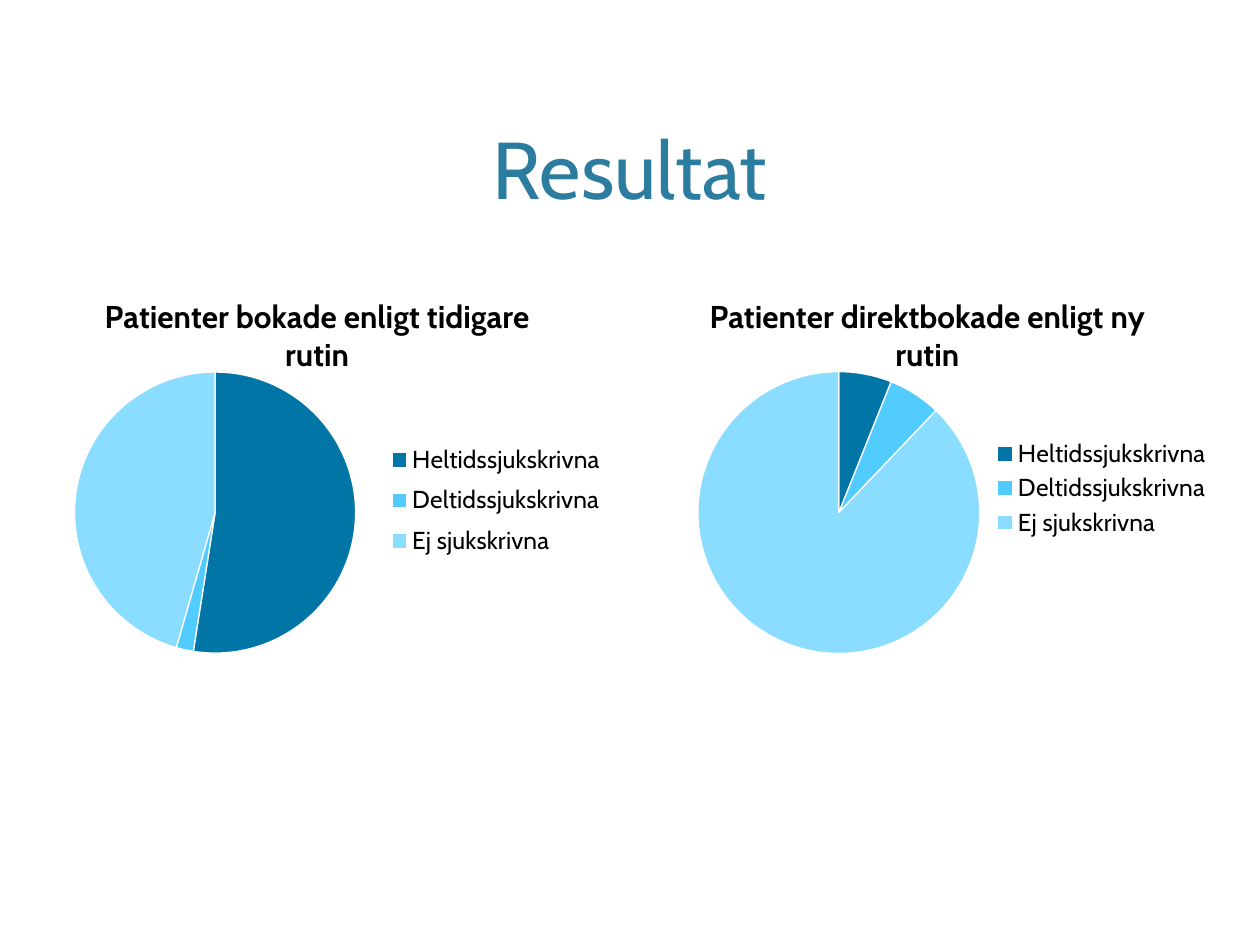
from lxml import etree
from pptx import Presentation
from pptx.chart.data import CategoryChartData
from pptx.dml.color import RGBColor
from pptx.enum.chart import XL_CHART_TYPE, XL_LEGEND_POSITION
from pptx.enum.text import MSO_ANCHOR, PP_ALIGN
from pptx.oxml.ns import qn
from pptx.util import Inches, Pt

FACE = "Cabin"
GROUPS = {
    "Heltidssjukskrivna": "0075A6",
    "Deltidssjukskrivna": "52CCFF",
    "Ej sjukskrivna": "8BDDFF",
}


def color(code):
    return RGBColor.from_string(code)


def style(font, size, ink="000000", bold=False):
    font.name, font.size, font.bold = FACE, Pt(size), bold
    font.color.rgb = color(ink)


def write(frame, text, size, **look):
    para = frame.paragraphs[0]
    para.alignment = PP_ALIGN.CENTER
    run = para.add_run()
    run.text = text
    style(run.font, size, **look)


def layout(part, inner=False, **place):
    """Place a chart part by fractions of the chart's size."""
    for old in part.findall(qn("c:layout")):
        part.remove(old)
    node = etree.Element(qn("c:layout"))
    manual = etree.SubElement(node, qn("c:manualLayout"))
    values = {"layoutTarget": "inner"} if inner else {}
    values.update(xMode="edge", yMode="edge", **place)
    for key, value in values.items():
        etree.SubElement(manual, qn("c:" + key)).set("val", str(value))
    mark = part.find(qn("c:overlay"))
    if mark is None:
        part.insert(0, node)
    else:
        mark.addprevious(node)


def add_title(slide, text, left, top, width, height):
    title = slide.shapes.title
    title.left, title.top = Inches(left), Inches(top)
    title.width, title.height = Inches(width), Inches(height)
    title.text_frame.vertical_anchor = MSO_ANCHOR.MIDDLE
    write(title.text_frame, text, 46, ink="2C7C9F")


def add_pie(slide, text, values, box, head, plot, key):
    data = CategoryChartData()
    data.categories = list(GROUPS)
    data.add_series("Series 1", values)
    chart = slide.shapes.add_chart(
        XL_CHART_TYPE.PIE, *map(Inches, box), data).chart
    style(chart.font, 10)

    # Heading
    chart.has_title = True
    write(chart.chart_title.text_frame, text, 18, bold=True)
    layout(chart.chart_title._element, **head)

    # Slices
    chart.plots[0].vary_by_categories = True
    series = chart.plots[0].series[0]
    for index, fill in enumerate(GROUPS.values()):
        look = series.points[index].format
        look.fill.solid()
        look.fill.fore_color.rgb = color(fill)
        look.line.color.rgb = color("FFFFFF")
        look.line.width = Pt(0.75)
    layout(chart._chartSpace.chart.plotArea, inner=True, **plot)

    # Legend
    chart.has_legend = True
    legend = chart.legend
    legend.position = XL_LEGEND_POSITION.RIGHT
    legend.include_in_layout = False
    style(legend.font, 14)
    layout(legend._element, **key)


def main():
    deck = Presentation()
    deck.slide_width, deck.slide_height = Inches(10), Inches(7.5)
    slide = deck.slides.add_slide(deck.slide_layouts[5])
    add_title(slide, "Resultat", 0.75, 0.7, 8.5, 1.25)

    # Earlier routine
    add_pie(slide, "Patienter bokade enligt tidigare rutin", (53, 2, 46),
            (0.01, 1.94, 4.85, 3.87), dict(x=0.16, y=0.09),
            dict(x=0.12, y=0.26, w=0.46, h=0.58),
            dict(x=0.63, y=0.39, w=0.36, h=0.27))

    # New routine
    add_pie(slide, "Patienter direktbokade enligt ny rutin", (6, 6, 87),
            (4.92, 1.94, 4.76, 3.87), dict(x=0.14, y=0.09),
            dict(x=0.13, y=0.26, w=0.47, h=0.58),
            dict(x=0.63, y=0.39, w=0.36, h=0.22))

    deck.save("out.pptx")


if __name__ == "__main__":
    main()
